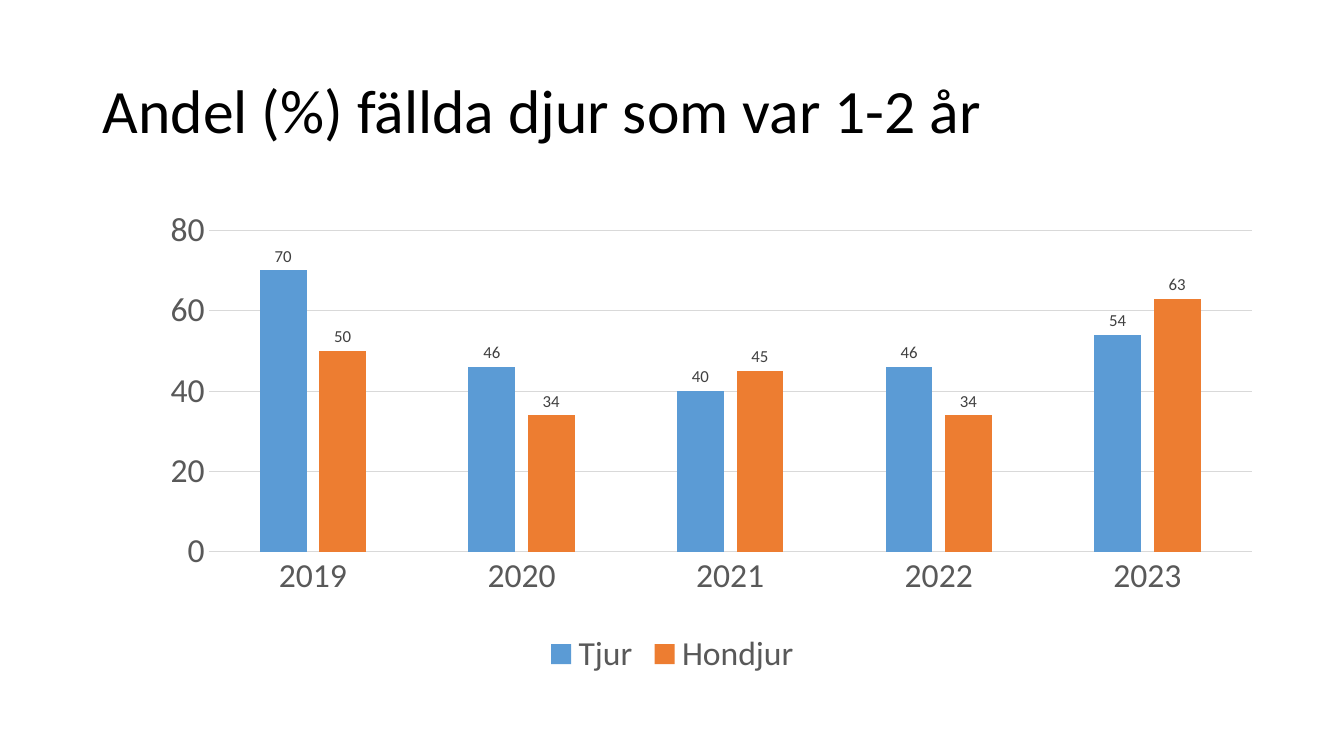
import dataclasses

import lxml.etree
import pptx
import pptx.chart.axis
import pptx.chart.chart
import pptx.chart.data
import pptx.chart.series
import pptx.dml.color
import pptx.enum.chart
import pptx.enum.text
import pptx.oxml.ns
import pptx.slide
import pptx.text.text
import pptx.util

FONT = "Calibri"
TEXT_GREY = "595959"
LINE_GREY = "D9D9D9"
YEARS = ["2019", "2020", "2021", "2022", "2023"]
LEFT, WIDTH = pptx.util.Inches(0.92), pptx.util.Inches(11.5)


@dataclasses.dataclass(frozen=True)
class AnimalGroup:
    name: str
    shares: tuple[int, ...]
    color: str


GROUPS = [
    AnimalGroup("Tjur", (70, 46, 40, 46, 54), "5B9BD5"),
    AnimalGroup("Hondjur", (50, 34, 45, 34, 63), "ED7D31"),
]


def rgb(color: str) -> pptx.dml.color.RGBColor:
    return pptx.dml.color.RGBColor.from_string(color)


def style_font(font: pptx.text.text.Font, size: float, color: str) -> None:
    font.name = FONT
    font.size = pptx.util.Pt(size)
    font.color.rgb = rgb(color)


def style_line(line: pptx.dml.line.LineFormat) -> None:
    line.color.rgb = rgb(LINE_GREY)
    line.width = pptx.util.Pt(0.75)


def add_title(slide: pptx.slide.Slide, wording: str) -> None:
    title = slide.shapes.title
    title.left, title.top = LEFT, pptx.util.Inches(0.4)
    title.width, title.height = WIDTH, pptx.util.Inches(1.45)
    frame = title.text_frame
    frame.text = wording
    frame.word_wrap = True
    frame.auto_size = pptx.enum.text.MSO_AUTO_SIZE.NONE
    frame.vertical_anchor = pptx.enum.text.MSO_ANCHOR.MIDDLE
    paragraph = frame.paragraphs[0]
    paragraph.alignment = pptx.enum.text.PP_ALIGN.LEFT
    paragraph.line_spacing = 0.9
    style_font(paragraph.runs[0].font, 44, "000000")


def style_axes(chart: pptx.chart.chart.Chart) -> None:
    years, shares = chart.category_axis, chart.value_axis
    for axis in (years, shares):
        axis.major_tick_mark = pptx.enum.chart.XL_TICK_MARK.NONE
        axis.minor_tick_mark = pptx.enum.chart.XL_TICK_MARK.NONE
        style_font(axis.tick_labels.font, 24, TEXT_GREY)
    style_line(years.format.line)
    shares.format.line.fill.background()
    shares.minimum_scale, shares.maximum_scale, shares.major_unit = 0, 80, 20
    shares.has_major_gridlines = True
    style_line(shares.major_gridlines.format.line)


def style_series(series: pptx.chart.series.BarSeries, color: str) -> None:
    series.format.fill.solid()
    series.format.fill.fore_color.rgb = rgb(color)
    series.invert_if_negative = False
    labels = series.data_labels
    labels.show_value = True
    labels.position = pptx.enum.chart.XL_LABEL_POSITION.OUTSIDE_END
    style_font(labels.font, 12, "404040")


def place_plot(chart: pptx.chart.chart.Chart, x: float, y: float, w: float, h: float) -> None:
    """Fix the inner plot area, in fractions of the chart."""
    qn = pptx.oxml.ns.qn
    plot_area = chart.element.find(f".//{qn('c:plotArea')}")
    for automatic in plot_area.findall(qn("c:layout")):
        plot_area.remove(automatic)
    layout = lxml.etree.Element(qn("c:layout"))
    manual = lxml.etree.SubElement(layout, qn("c:manualLayout"))
    settings = {"layoutTarget": "inner", "xMode": "edge", "yMode": "edge",
                "x": x, "y": y, "w": w, "h": h}
    for tag, value in settings.items():
        lxml.etree.SubElement(manual, qn(f"c:{tag}")).set("val", str(value))
    plot_area.insert(0, layout)


def add_share_chart(slide: pptx.slide.Slide) -> None:
    data = pptx.chart.data.CategoryChartData()
    data.categories = YEARS
    for group in GROUPS:
        data.add_series(group.name, group.shares)
    chart = slide.shapes.add_chart(
        pptx.enum.chart.XL_CHART_TYPE.COLUMN_CLUSTERED,
        LEFT, pptx.util.Inches(2), WIDTH, pptx.util.Inches(4.76), data,
    ).chart
    chart.has_title = False
    style_font(chart.font, 10, "000000")

    # Columns
    plot = chart.plots[0]
    plot.gap_width, plot.overlap = 219, -27
    plot.vary_by_categories = False
    for series, group in zip(plot.series, GROUPS):
        style_series(series, group.color)

    # Axes and plot area
    style_axes(chart)
    place_plot(chart, 0.1, 0.06, 0.9, 0.67)

    # Legend
    chart.has_legend = True
    chart.legend.position = pptx.enum.chart.XL_LEGEND_POSITION.BOTTOM
    chart.legend.include_in_layout = False
    style_font(chart.legend.font, 24, TEXT_GREY)


def main() -> None:
    deck = pptx.Presentation()
    deck.slide_width = pptx.util.Inches(13.33)
    deck.slide_height = pptx.util.Inches(7.5)
    slide = deck.slides.add_slide(deck.slide_layouts.get_by_name("Title Only"))
    add_title(slide, "Andel (%) fällda djur som var 1-2 år")
    add_share_chart(slide)
    deck.save("out.pptx")


if __name__ == "__main__":
    main()
